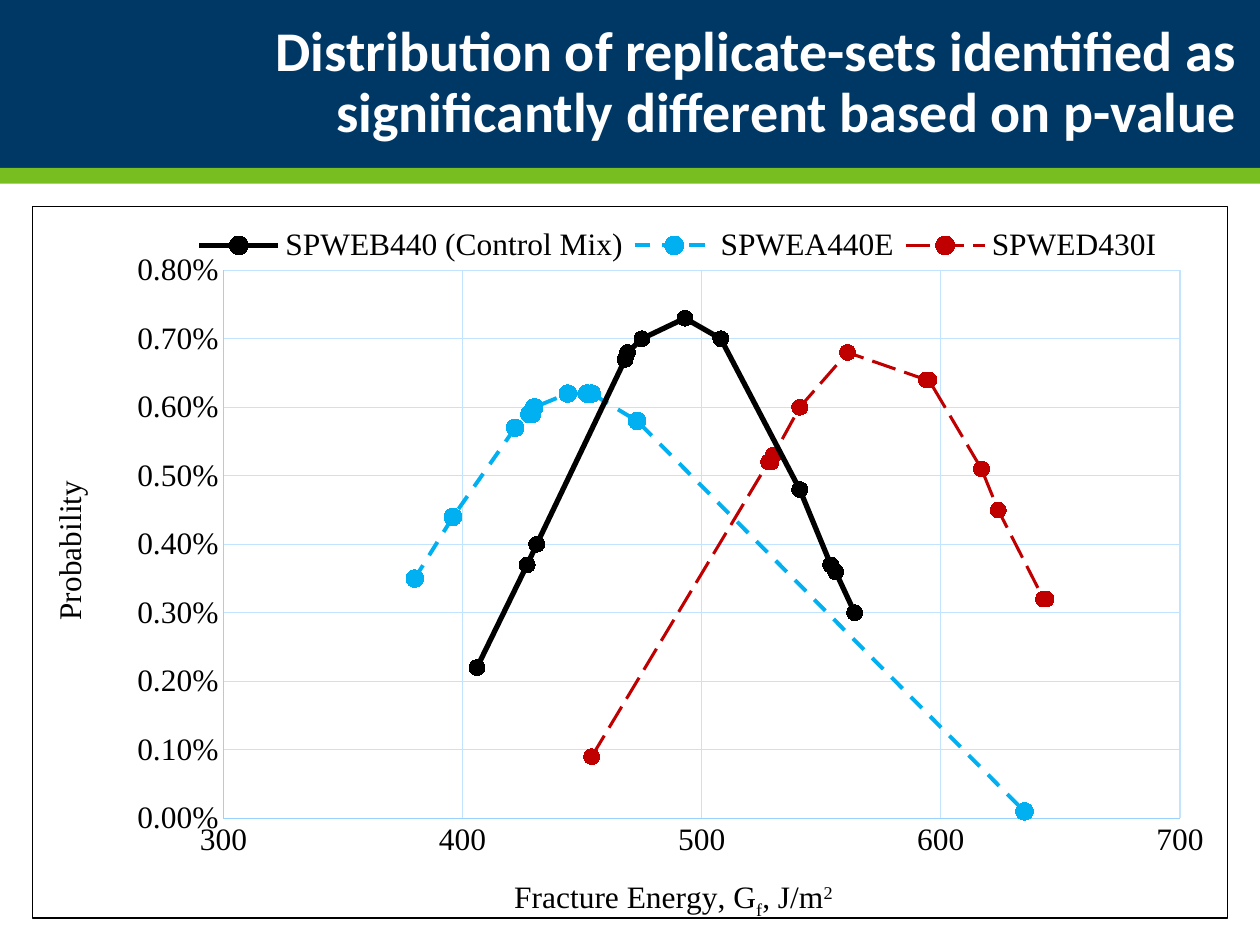
"""Build a slide with a scatter chart of fracture energy distributions."""
from collections import namedtuple
from pptx import Presentation
from pptx.chart.data import XyChartData
from pptx.dml.color import RGBColor
from pptx.enum.chart import XL_CHART_TYPE, XL_LEGEND_POSITION, XL_MARKER_STYLE, XL_TICK_MARK
from pptx.enum.dml import MSO_LINE
from pptx.enum.shapes import MSO_SHAPE
from pptx.enum.text import MSO_ANCHOR, PP_ALIGN
from pptx.oxml import parse_xml
from pptx.oxml.ns import nsdecls, qn
from pptx.util import Pt

Theme = namedtuple("Theme", "navy green white black axis grid blue red marker_red marker_gold "
                   "title_size chart_size title_font chart_font")
theme = Theme(*map(RGBColor.from_string, (
    "003865", "78BE21", "FFFFFF", "000000", "99D1FF", "C2E4FF", "00B0F0", "C00000", "FF0000", "FFC000")),
    Pt(32), Pt(18), "Calibri", "Times New Roman")


def style_font(font, name, size, color, bold):
    font.name, font.size, font.bold = name, size, bold
    font.color.rgb = color


def set_layout(parent, index, inner=False, **box):
    for old in parent.findall(qn("c:layout")):
        parent.remove(old)
    target = '<c:layoutTarget val="inner"/>' if inner else ""
    modes = "".join(f'<c:{k}Mode val="edge"/>' for k in "xy")
    sizes = "".join(f'<c:{k} val="{v}"/>' for k, v in box.items())
    parent.insert(index, parse_xml(
        f'<c:layout {nsdecls("c")}><c:manualLayout>{target}{modes}{sizes}</c:manualLayout></c:layout>'))


prs = Presentation()
prs.slide_width, prs.slide_height = Pt(720), Pt(540)
s = prs.slides.add_slide(prs.slide_layouts[5])

for top, height, color in ((0, 96, theme.navy), (96, 9, theme.green)):
    sp = s.shapes.add_shape(MSO_SHAPE.RECTANGLE, Pt(0), Pt(top), prs.slide_width, Pt(height))
    sp.shadow.inherit = False
    sp.fill.solid()
    sp.fill.fore_color.rgb = color
    sp.line.fill.background()

title = s.shapes.title
s.shapes._spTree.append(title._element)
title.left, title.top, title.width, title.height = Pt(0), Pt(12), Pt(714), Pt(72)
tf = title.text_frame
tf.word_wrap = True
tf.vertical_anchor = MSO_ANCHOR.MIDDLE
p = tf.paragraphs[0]
p.alignment = PP_ALIGN.RIGHT
p.line_spacing = 0.9
r = p.add_run()
r.text = "Distribution of replicate-sets identified as significantly different based on p-value"
style_font(r.font, theme.title_font, theme.title_size, theme.white, True)

mixes = (
    ("SPWEB440 (Control Mix)", theme.black, 3, MSO_LINE.SOLID, 9, theme.marker_red,
     (406, 427, 431, 468, 469, 475, 493, 508, 541, 554, 556, 564),
     (0.0022, 0.0037, 0.004, 0.0067, 0.0068, 0.007, 0.0073, 0.007, 0.0048, 0.0037, 0.0036, 0.003)),
    ("SPWEA440E", theme.blue, 2.25, MSO_LINE.DASH, 10, theme.green,
     (380, 396, 422, 428, 429, 430, 444, 444, 452, 454, 473, 635),
     (0.0035, 0.0044, 0.0057, 0.0059, 0.0059, 0.006, 0.0062, 0.0062, 0.0062, 0.0062, 0.0058, 0.0001)),
    ("SPWED430I", theme.red, 1.75, MSO_LINE.LONG_DASH, 9, theme.marker_gold,
     (454, 528, 529, 530, 541, 561, 594, 595, 617, 624, 643, 644),
     (0.0009, 0.0052, 0.0052, 0.0053, 0.006, 0.0068, 0.0064, 0.0064, 0.0051, 0.0045, 0.0032, 0.0032)),
)
data = XyChartData()
for name, *_, energies, probabilities in mixes:
    series = data.add_series(name)
    for energy, probability in zip(energies, probabilities):
        series.add_data_point(energy, probability)

chart = s.shapes.add_chart(XL_CHART_TYPE.XY_SCATTER_SMOOTH, Pt(18), Pt(117.5), Pt(684), Pt(412), data).chart
chart.has_title = False
style_font(chart.font, theme.chart_font, theme.chart_size, theme.black, False)
space = chart._chartSpace
space.find(qn("c:chart")).addnext(parse_xml(
    f'<c:spPr {nsdecls("c", "a")}><a:solidFill><a:srgbClr val="{theme.white}"/></a:solidFill>'
    f'<a:ln w="{Pt(0.75)}"><a:solidFill><a:srgbClr val="{theme.black}"/></a:solidFill></a:ln></c:spPr>'))
set_layout(space.chart.plotArea, 0, inner=True, x=0.16, y=0.09, w=0.8, h=0.77)

chart.has_legend = True
legend = chart.legend
legend.position = XL_LEGEND_POSITION.TOP
legend.include_in_layout = False
style_font(legend.font, theme.chart_font, theme.chart_size, theme.black, False)
set_layout(legend._element, 1, x=0.13, y=0.02, w=0.82, h=0.07)

plot = chart.plots[0]
plot.vary_by_categories = False
for series, (_, color, width, dash, size, fill, *_) in zip(plot.series, mixes):
    series.smooth = True
    line = series.format.line
    line.color.rgb, line.width, line.dash_style = color, Pt(width), dash
    marker = series.marker
    marker.style, marker.size = XL_MARKER_STYLE.CIRCLE, size
    marker.format.fill.solid()
    marker.format.fill.fore_color.rgb = fill
    marker.format.line.color.rgb = color

axes = (
    (chart.category_axis, 300, 700, 100, "0", 0, (0.4, 0.94),
     (("Fracture Energy, G", 0), ("f", -25000), (", J/m", 0), ("2", 30000))),
    (chart.value_axis, 0, 0.008, 0.001, "0.00%", -5400000, (0.01, 0.38), (("Probability", 0),)),
)
for axis, low, high, step, number_format, rotation, (x, y), parts in axes:
    axis.minimum_scale, axis.maximum_scale, axis.major_unit = low, high, step
    axis.major_tick_mark = axis.minor_tick_mark = XL_TICK_MARK.NONE
    axis.has_major_gridlines = True
    for line, color in ((axis.format.line, theme.axis), (axis.major_gridlines.format.line, theme.grid)):
        line.color.rgb, line.width = color, Pt(0.75)
    labels = axis.tick_labels
    labels.number_format, labels.number_format_is_linked = number_format, False
    style_font(labels.font, theme.chart_font, theme.chart_size, theme.black, False)
    tf = axis.axis_title.text_frame
    tf._txBody.find(qn("a:bodyPr")).set("rot", str(rotation))
    p = tf.paragraphs[0]
    for text, baseline in parts:
        r = p.add_run()
        r.text = text
        style_font(r.font, theme.chart_font, theme.chart_size, theme.black, False)
        r.font._element.set("baseline", str(baseline))
    set_layout(axis.axis_title._element, 1, x=x, y=y)

prs.save("out.pptx")
